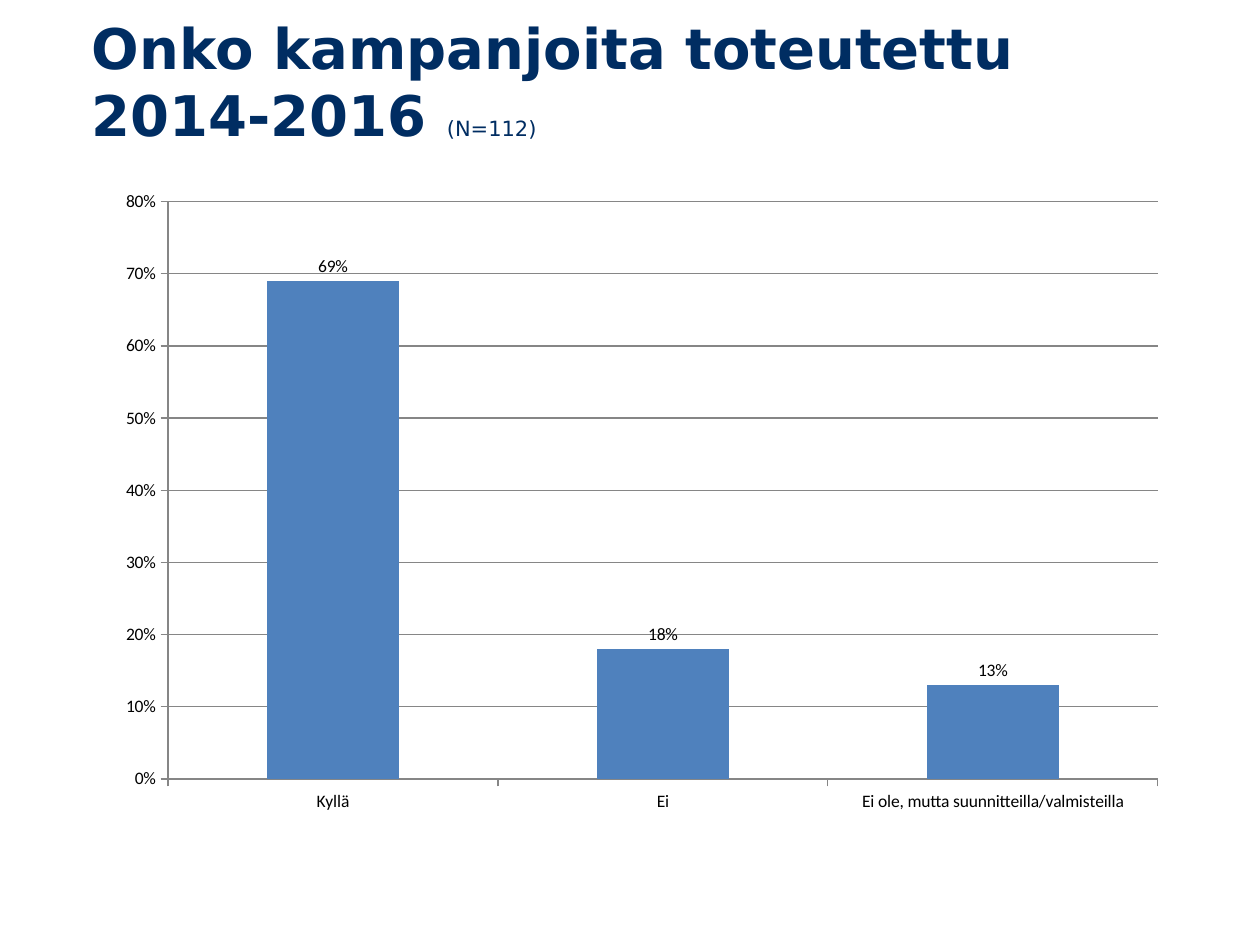
from dataclasses import dataclass

from pptx import Presentation
from pptx.chart.chart import Chart
from pptx.chart.data import CategoryChartData
from pptx.dml.color import RGBColor
from pptx.enum.chart import XL_CHART_TYPE, XL_LABEL_POSITION, XL_TICK_MARK
from pptx.enum.text import MSO_ANCHOR, MSO_AUTO_SIZE, PP_ALIGN
from pptx.shapes.autoshape import Shape
from pptx.slide import Slide
from pptx.util import Inches, Pt

NAVY = RGBColor(0x00, 0x2D, 0x62)
BLUE = RGBColor(0x4F, 0x81, 0xBD)
GREY = RGBColor(0x86, 0x86, 0x86)
BLACK = RGBColor(0x00, 0x00, 0x00)
PERCENT = "0%"


@dataclass(frozen=True)
class TitlePart:
    text: str
    size: int
    bold: bool


@dataclass(frozen=True)
class Answer:
    label: str
    share: float


QUESTION = [
    TitlePart("Onko kampanjoita toteutettu 2014-2016 ", 32, True),
    TitlePart("(N=112)", 12, False),
]
ANSWERS = [
    Answer("Kyllä", 0.69),
    Answer("Ei", 0.18),
    Answer("Ei ole, mutta suunnitteilla/valmisteilla", 0.13),
]


def write_title(title: Shape, parts: list[TitlePart]) -> None:
    title.left, title.top = Inches(0.73), Inches(0.1)
    title.width, title.height = Inches(8.53), Inches(1.08)
    frame = title.text_frame
    frame.margin_left = frame.margin_right = Inches(0)
    frame.margin_top = frame.margin_bottom = Inches(0)
    frame.word_wrap = True
    frame.auto_size = MSO_AUTO_SIZE.SHAPE_TO_FIT_TEXT
    frame.vertical_anchor = MSO_ANCHOR.MIDDLE
    paragraph = frame.paragraphs[0]
    paragraph.alignment = PP_ALIGN.LEFT
    for part in parts:
        run = paragraph.add_run()
        run.text = part.text
        run.font.name = "DejaVu Sans"
        run.font.size = Pt(part.size)
        run.font.bold = part.bold
        run.font.color.rgb = NAVY


def add_answer_chart(slide: Slide, answers: list[Answer]) -> Chart:
    answer_data = CategoryChartData(number_format=PERCENT)
    answer_data.categories = [answer.label for answer in answers]
    answer_data.add_series("Series 1", [answer.share for answer in answers])
    chart = slide.shapes.add_chart(
        XL_CHART_TYPE.COLUMN_CLUSTERED,
        Inches(0.83), Inches(1.42), Inches(8.53), Inches(5.12),
        answer_data,
    ).chart
    chart.has_title = False
    chart.has_legend = False
    chart.font.name = "Calibri"
    chart.font.size = Pt(10)
    chart.font.color.rgb = BLACK
    return chart


def format_columns(chart: Chart) -> None:
    columns = chart.plots[0]
    columns.gap_width = 150
    columns.vary_by_categories = False
    shares = columns.series[0]
    shares.format.fill.solid()
    shares.format.fill.fore_color.rgb = BLUE
    labels = shares.data_labels
    labels.show_value = True
    labels.number_format = PERCENT
    labels.number_format_is_linked = False
    labels.position = XL_LABEL_POSITION.OUTSIDE_END


def format_axes(chart: Chart) -> None:
    share_axis = chart.value_axis
    share_axis.minimum_scale = 0
    share_axis.maximum_scale = 0.8
    share_axis.major_unit = 0.1
    share_axis.has_major_gridlines = True
    share_axis.tick_labels.number_format = PERCENT
    share_axis.tick_labels.number_format_is_linked = False
    for axis in (chart.category_axis, share_axis):
        axis.major_tick_mark = XL_TICK_MARK.OUTSIDE
        axis.minor_tick_mark = XL_TICK_MARK.NONE
    for part in (chart.category_axis, share_axis, share_axis.major_gridlines):
        part.format.line.color.rgb = GREY
        part.format.line.width = Pt(0.75)


def main() -> None:
    presentation = Presentation()
    presentation.slide_width = Inches(10)
    presentation.slide_height = Inches(7.5)
    slide = presentation.slides.add_slide(presentation.slide_layouts[5])
    write_title(slide.shapes.title, QUESTION)
    chart = add_answer_chart(slide, ANSWERS)
    format_columns(chart)
    format_axes(chart)
    presentation.save("out.pptx")


if __name__ == "__main__":
    main()
